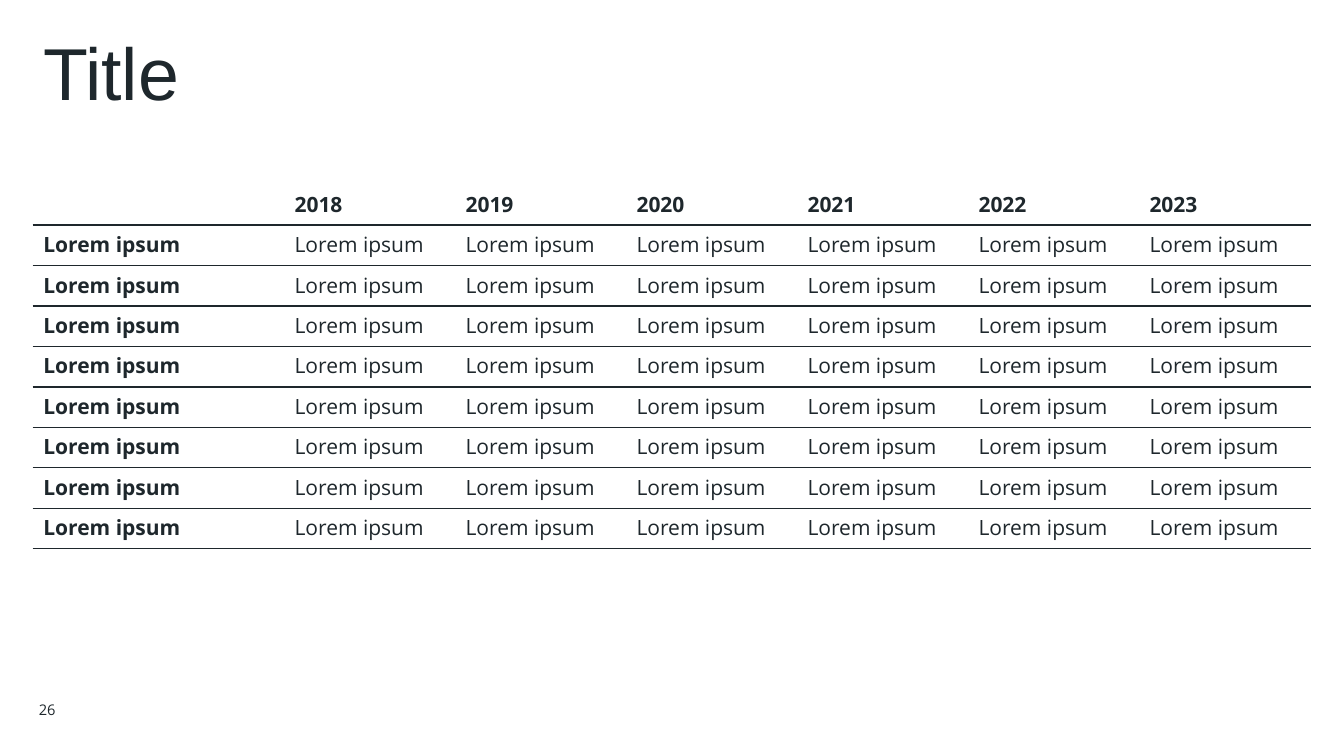
from lxml import etree
from pptx import Presentation
from pptx.dml.color import RGBColor
from pptx.enum.text import MSO_ANCHOR, PP_ALIGN
from pptx.oxml.ns import qn
from pptx.util import Cm, Pt

LEFT, RIGHT = PP_ALIGN.LEFT, PP_ALIGN.RIGHT
TOP, MIDDLE = MSO_ANCHOR.TOP, MSO_ANCHOR.MIDDLE

# Content
TITLE = "Title"
PAGE_NUMBER = "26"
YEARS = ["2018", "2019", "2020", "2021", "2022", "2023"]
ROW_LABELS = ["Lorem ipsum"] * 8
ENTRY = "Lorem ipsum"
ROWS = [[""] + YEARS] + [[label] + [ENTRY] * len(YEARS) for label in ROW_LABELS]

# Look
COLORS = {"ink": "1E272C"}
TITLE_FONT = {"name": "Arial", "size": Pt(52.5), "bold": False}
NUMBER_FONT = {"name": "Open Sans", "size": Pt(10.5), "bold": False}
CELL_FONT = {"name": "Open Sans", "size": Pt(15)}

# Layout
TABLE_LEFT, TABLE_TOP = Cm(0.84), Cm(4.65)
LABEL_WIDTH, YEAR_WIDTH, ROW_HEIGHT = Cm(6.33), Cm(4.31), Cm(1.02)
INSET = Cm(0.25)


def write(para, text, look):
    span = para.add_run()
    span.text = text
    for name, value in look.items():
        setattr(span.font, name, value)
    span.font.color.rgb = RGBColor.from_string(COLORS["ink"])


def add_text(page, place, text, look, align, anchor, spacing):
    box = page.shapes.add_textbox(*place)
    frame = box.text_frame
    settings = {"word_wrap": True, "vertical_anchor": anchor, "margin_left": INSET,
                "margin_right": INSET, "margin_top": INSET, "margin_bottom": INSET}
    for name, value in settings.items():
        setattr(frame, name, value)
    para = frame.paragraphs[0]
    para.alignment, para.line_spacing = align, spacing
    write(para, text, look)


def add_border(cell, side):
    line = etree.Element(qn(f"a:{side}"), w=str(Pt(1)))
    fill = etree.SubElement(line, qn("a:solidFill"))
    etree.SubElement(fill, qn("a:srgbClr"), val=COLORS["ink"])
    cell._tc.get_or_add_tcPr().insert(0, line)


def add_year_table(page):
    width = LABEL_WIDTH + YEAR_WIDTH * len(YEARS)
    table = page.shapes.add_table(len(ROWS), len(ROWS[0]), TABLE_LEFT, TABLE_TOP,
                                  width, ROW_HEIGHT * len(ROWS)).table
    table.horz_banding = False
    for index, column in enumerate(table.columns):
        column.width = YEAR_WIDTH if index else LABEL_WIDTH
    for r, texts in enumerate(ROWS):
        table.rows[r].height = ROW_HEIGHT
        for c, text in enumerate(texts):
            cell = table.cell(r, c)
            cell.fill.background()
            add_border(cell, "lnB")
            if r:
                add_border(cell, "lnT")
            para = cell.text_frame.paragraphs[0]
            if text:
                write(para, text, {**CELL_FONT, "bold": r == 0 or c == 0})
            else:
                # Keeps the empty corner cell from stretching its row
                para._p.get_or_add_endParaRPr().set("sz", "1500")


def main():
    deck = Presentation()
    deck.slide_width, deck.slide_height = Cm(33.87), Cm(19.05)
    page = deck.slides.add_slide(deck.slide_layouts[6])

    # Title
    add_text(page, (Cm(0.84), Cm(0.76), Cm(32.2), Cm(3.89)),
             TITLE, TITLE_FONT, LEFT, TOP, 0.85)
    # Table of years
    add_year_table(page)
    # Page number
    add_text(page, (Cm(0), Cm(17.37), Cm(1.65), Cm(1.02)),
             PAGE_NUMBER, NUMBER_FONT, RIGHT, MIDDLE, 1.0)

    deck.save("out.pptx")


if __name__ == "__main__":
    main()
